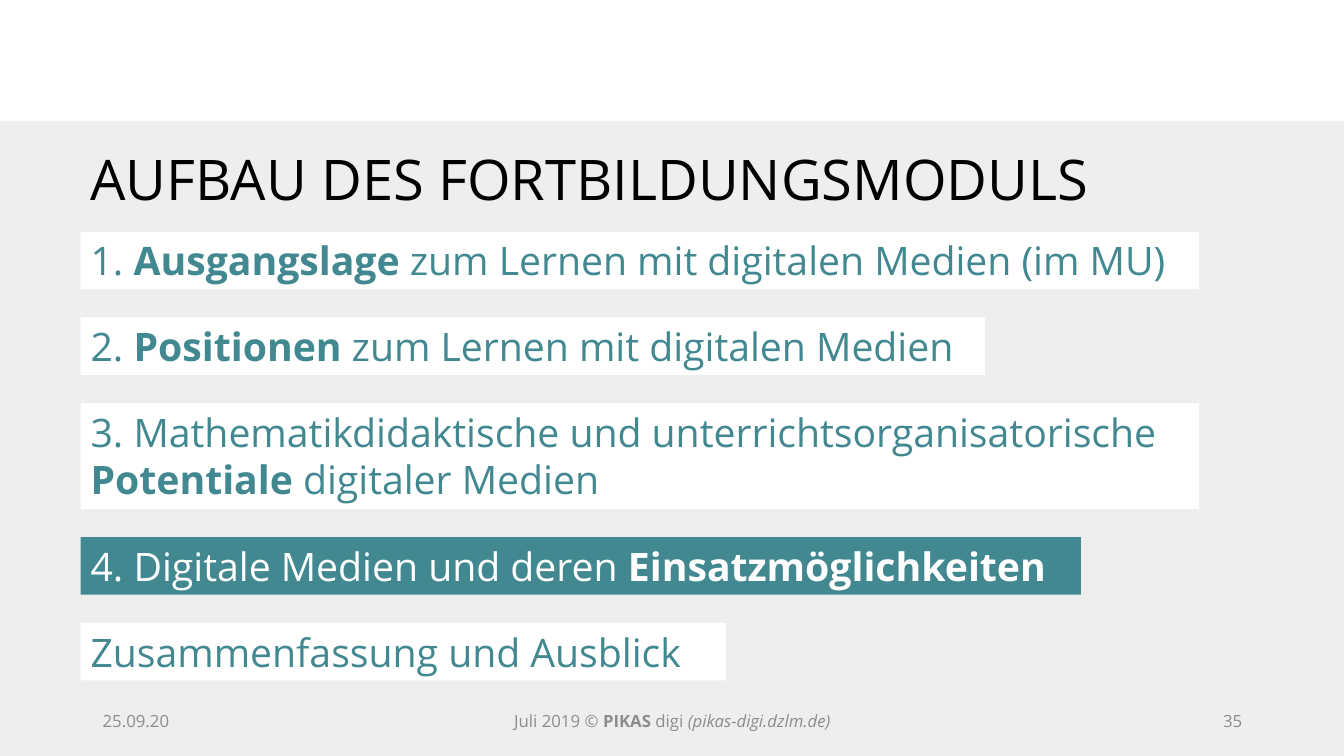
from pptx import Presentation, util as u
from pptx.dml.color import RGBColor
from pptx.enum import shapes, text

PX = 9144  # EMU per px, 100 px to the inch
FONT = "Open Sans"
COLORS = {
    "panel": "EEEEEE",
    "white": "FFFFFF",
    "teal": "428891",
    "black": "000000",
    "gray": "8C8C8C",
}
BAR_LEFT, BAR_TOP, BAR_GAP = 80, 230, 28

# Width, height, highlighted, runs as (text, style)
AGENDA = [
    (1109, 57, False, [("1. ", ""), ("Ausgangslage", "bold"),
                       (" zum Lernen mit digitalen Medien (im MU)", "")]),
    (897, 57, False, [("2. ", ""), ("Positionen", "bold"),
                      (" zum Lernen mit digitalen Medien", "")]),
    (1109, 105, False, [("3. Mathematikdidaktische und unterrichtsorganisatorische ", ""),
                        ("Potentiale", "bold"), (" digitaler Medien", "")]),
    (992, 57, True, [("4. Digitale Medien und deren ", ""),
                     ("Einsatzmöglichkeiten", "bold")]),
    (640, 57, False, [("Zusammenfassung und Ausblick", "")]),
]

# Left, width, alignment, runs
FOOTER = [
    (92, 300, text.PP_ALIGN.LEFT, [("25.09.20", "")]),
    (442, 450, text.PP_ALIGN.CENTER, [("Juli 2019 © ", ""), ("PIKAS", "bold"),
                                      (" digi ", ""), ("(pikas-digi.dzlm.de)", "italic")]),
    (942, 300, text.PP_ALIGN.RIGHT, [("35", "")]),
]


def rgb(name):
    return RGBColor.from_string(COLORS[name])


def emu(*lengths):
    return [length * PX for length in lengths]


def write(shape, runs, size, color, align=text.PP_ALIGN.LEFT, anchor=text.MSO_ANCHOR.TOP):
    frame = shape.text_frame
    frame.word_wrap = True
    frame.vertical_anchor = anchor
    paragraph = frame.paragraphs[0]
    paragraph.alignment = align
    paragraph.font.name = FONT
    paragraph.font.size = u.Pt(size)
    paragraph.font.color.rgb = rgb(color)
    for words, style in runs:
        run = paragraph.add_run()
        run.text = words
        if style:
            setattr(run.font, style, True)


def add_rectangle(slide, box, fill):
    shape = slide.shapes.add_shape(shapes.MSO_SHAPE.RECTANGLE, *emu(*box))
    shape.shadow.inherit = False
    shape.fill.solid()
    shape.fill.fore_color.rgb = rgb(fill)
    shape.line.fill.background()
    return shape


def add_label(slide, box, runs, size, color, **layout):
    write(slide.shapes.add_textbox(*emu(*box)), runs, size, color, **layout)


def main():
    presentation = Presentation()
    presentation.slide_width, presentation.slide_height = emu(1333, 750)
    slide = presentation.slides.add_slide(presentation.slide_layouts[6])

    # Background panel
    add_rectangle(slide, (0, 120, 1333, 630), "panel")

    # Agenda bars, stacked with equal gaps
    top = BAR_TOP
    for width, height, highlighted, runs in AGENDA:
        fill, color = ("teal", "white") if highlighted else ("white", "teal")
        bar = add_rectangle(slide, (BAR_LEFT, top, width, height), fill)
        write(bar, runs, 28, color)
        top += height + BAR_GAP

    # Title
    add_label(slide, (BAR_LEFT, 138, 1174, 77),
              [("AUFBAU DES FORTBILDUNGSMODULS", "")], 40, "black")

    # Footer
    for left, width, align, runs in FOOTER:
        add_label(slide, (left, 695, width, 40), runs, 12, "gray",
                  align=align, anchor=text.MSO_ANCHOR.MIDDLE)

    presentation.save("out.pptx")


if __name__ == "__main__":
    main()
